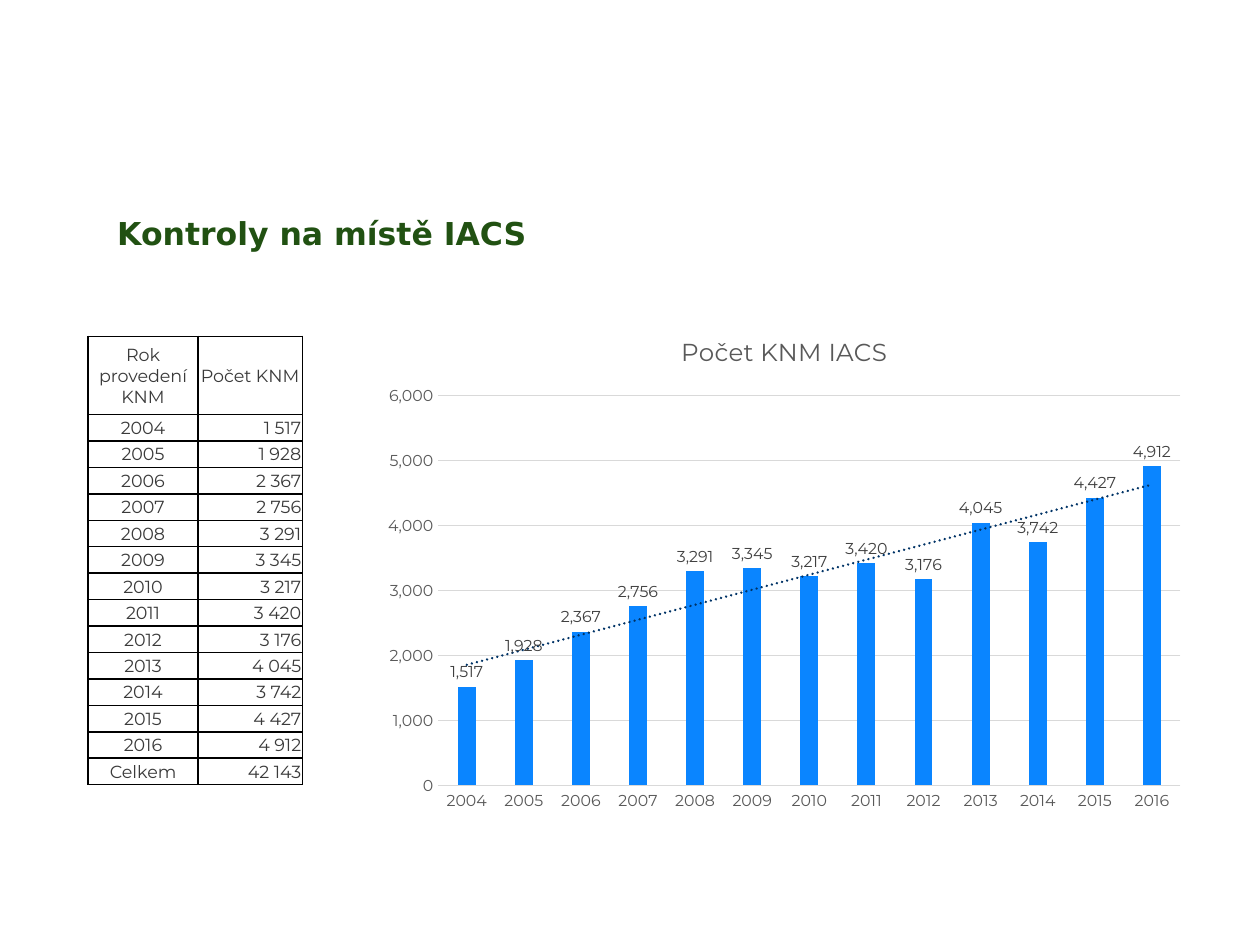
import pptx
import pptx.util
import pptx.chart.data
import pptx.dml.color
import pptx.enum.chart
import pptx.enum.text
import pptx.oxml
import pptx.oxml.ns

Inches = pptx.util.Inches
Pt = pptx.util.Pt
RGBColor = pptx.dml.color.RGBColor
Align = pptx.enum.text.PP_ALIGN
Anchor = pptx.enum.text.MSO_ANCHOR

GREEN = RGBColor(0x21, 0x51, 0x12)
BLUE = RGBColor(0x0A, 0x85, 0xFF)
NAVY = RGBColor(0x00, 0x33, 0x66)
BLACK = RGBColor(0x00, 0x00, 0x00)
WHITE = RGBColor(0xFF, 0xFF, 0xFF)
TABLE_GREY = RGBColor(0x3A, 0x3A, 0x3A)
LABEL_GREY = RGBColor(0x40, 0x40, 0x40)
AXIS_GREY = RGBColor(0x59, 0x59, 0x59)
GRID_GREY = RGBColor(0xD9, 0xD9, 0xD9)
TITLE_FONT = "DejaVu Sans"
BODY_FONT = "Montserrat"

TITLE = "Kontroly na místě IACS"
CHART_TITLE = "Počet KNM IACS"
HEADER = ("Rok provedení KNM", "Počet KNM")
TOTAL_LABEL = "Celkem"
FIRST_YEAR = 2004
INSPECTIONS = [1517, 1928, 2367, 2756, 3291, 3345, 3217,
               3420, 3176, 4045, 3742, 4427, 4912]
YEARS = [str(FIRST_YEAR + index) for index in range(len(INSPECTIONS))]

COLUMN_WIDTHS = (0.87, 0.83)
HEADER_HEIGHT, ROW_HEIGHT = 0.62, 0.21


def set_font(font, size, color, name=BODY_FONT, bold=False):
    font.size = Pt(size)
    font.name = name
    font.bold = bold
    font.color.rgb = color


def add_title(slide):
    box = slide.shapes.add_textbox(Inches(0.79), Inches(1.6), Inches(3.58), Inches(0.49))
    frame = box.text_frame
    frame.word_wrap = False
    frame.vertical_anchor = Anchor.BOTTOM
    frame.margin_left = frame.margin_right = Inches(0.14)
    frame.margin_top = frame.margin_bottom = Inches(0.09)
    frame.text = TITLE
    frame.paragraphs[0].alignment = Align.LEFT
    set_font(frame.paragraphs[0].runs[0].font, 18, GREEN, TITLE_FONT, True)


def add_trend(series):
    trend = pptx.oxml.parse_xml(
        f'<c:trendline {pptx.oxml.ns.nsdecls("c", "a")}>'
        f'<c:spPr><a:ln w="{Pt(1.5)}" cap="rnd"><a:solidFill><a:srgbClr val="{NAVY}"/>'
        '</a:solidFill><a:prstDash val="sysDot"/></a:ln></c:spPr>'
        '<c:trendlineType val="linear"/><c:dispRSqr val="0"/><c:dispEq val="0"/>'
        '</c:trendline>')
    series._element.find(pptx.oxml.ns.qn("c:cat")).addprevious(trend)


def add_inspection_chart(slide):
    data = pptx.chart.data.CategoryChartData(number_format="#,##0")
    data.categories = YEARS
    data.add_series(CHART_TITLE, INSPECTIONS)
    chart = slide.shapes.add_chart(
        pptx.enum.chart.XL_CHART_TYPE.COLUMN_CLUSTERED,
        Inches(2.95), Inches(2.49), Inches(6.55), Inches(4.02), data).chart
    set_font(chart.font, 10, BLACK)
    chart.has_legend = False
    chart.has_title = True
    title_frame = chart.chart_title.text_frame
    title_frame.text = CHART_TITLE
    set_font(title_frame.paragraphs[0].runs[0].font, 14, AXIS_GREY)
    chart.chart_title.include_in_layout = False

    for axis in (chart.category_axis, chart.value_axis):
        axis.major_tick_mark = axis.minor_tick_mark = pptx.enum.chart.XL_TICK_MARK.NONE
        set_font(axis.tick_labels.font, 9, AXIS_GREY)
    value_axis = chart.value_axis
    value_axis.tick_labels.number_format = "#,##0"
    value_axis.tick_labels.number_format_is_linked = False
    value_axis.format.line.fill.background()
    value_axis.has_major_gridlines = True
    for line in (chart.category_axis.format.line, value_axis.major_gridlines.format.line):
        line.color.rgb = GRID_GREY
        line.width = Pt(0.75)

    plot = chart.plots[0]
    plot.gap_width = 219
    plot.overlap = -27
    plot.vary_by_categories = False
    series = plot.series[0]
    series.format.fill.solid()
    series.format.fill.fore_color.rgb = BLUE
    labels = series.data_labels
    labels.show_value = True
    labels.position = pptx.enum.chart.XL_LABEL_POSITION.OUTSIDE_END
    labels.number_format = "#,##0"
    labels.number_format_is_linked = False
    set_font(labels.font, 9, LABEL_GREY)
    add_trend(series)


def style_cell(cell, alignment):
    properties = cell._tc.get_or_add_tcPr()
    for side in ("lnL", "lnR", "lnT", "lnB"):
        properties.append(pptx.oxml.parse_xml(
            f'<a:{side} {pptx.oxml.ns.nsdecls("a")} w="{Pt(1)}"><a:solidFill>'
            f'<a:srgbClr val="{BLACK}"/></a:solidFill></a:{side}>'))
    cell.fill.solid()
    cell.fill.fore_color.rgb = WHITE
    cell.vertical_anchor = Anchor.MIDDLE
    cell.margin_left = cell.margin_right = cell.margin_top = Inches(0.01)
    cell.margin_bottom = 0
    paragraph = cell.text_frame.paragraphs[0]
    paragraph.alignment = alignment
    set_font(paragraph.runs[0].font, 10, TABLE_GREY)


def add_inspection_table(slide):
    counts = [f"{count:,}".replace(",", " ") for count in INSPECTIONS + [sum(INSPECTIONS)]]
    rows = [HEADER, *zip(YEARS + [TOTAL_LABEL], counts)]
    heights = [HEADER_HEIGHT] + [ROW_HEIGHT] * len(counts)
    table = slide.shapes.add_table(
        len(rows), len(HEADER), Inches(0.7), Inches(2.67),
        Inches(sum(COLUMN_WIDTHS)), Inches(sum(heights))).table
    table.first_row = table.horz_banding = False
    for column, width in zip(table.columns, COLUMN_WIDTHS):
        column.width = Inches(width)
    for row_index, (texts, height) in enumerate(zip(rows, heights)):
        table.rows[row_index].height = Inches(height)
        for column_index, text in enumerate(texts):
            cell = table.cell(row_index, column_index)
            cell.text = text
            is_count = row_index > 0 and column_index == 1
            style_cell(cell, Align.RIGHT if is_count else Align.CENTER)


def main():
    presentation = pptx.Presentation()
    presentation.slide_width = Inches(10)
    presentation.slide_height = Inches(7.5)
    slide = presentation.slides.add_slide(presentation.slide_layouts[6])
    add_title(slide)
    add_inspection_chart(slide)
    add_inspection_table(slide)
    presentation.save("out.pptx")


if __name__ == "__main__":
    main()
